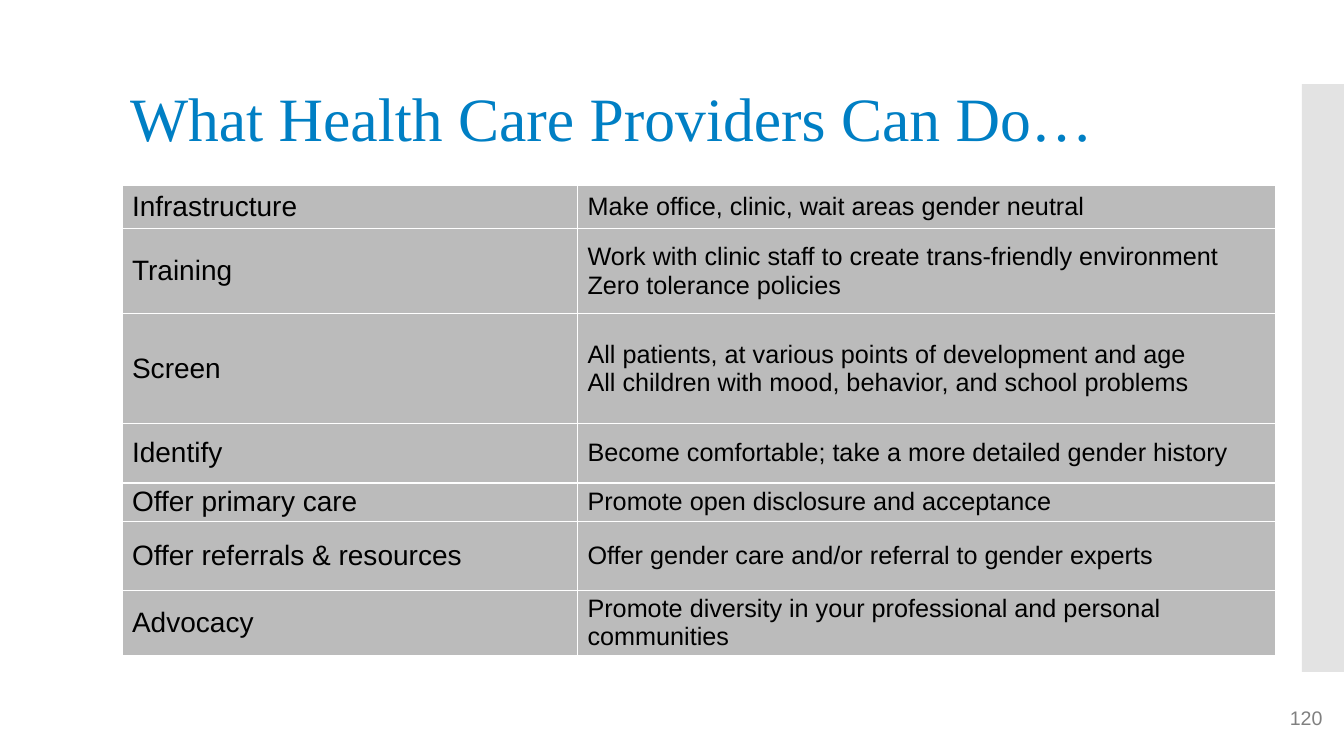
from lxml.etree import SubElement
from pptx import Presentation
from pptx.dml.color import RGBColor
from pptx.enum.shapes import MSO_SHAPE as Shape
from pptx.enum.text import MSO_ANCHOR as Anchor, PP_ALIGN as Align
from pptx.oxml.ns import qn
from pptx.util import Pt

TITLE = "What Health Care Providers Can Do…"
PAGE = "120"
# row height, topic, actions
ROWS = [
    (31, "Infrastructure", ["Make office, clinic, wait areas gender neutral"]),
    (60.5, "Training", ["Work with clinic staff to create trans-friendly environment",
                        "Zero tolerance policies"]),
    (78.5, "Screen", ["All patients, at various points of development and age",
                      "All children with mood, behavior, and school problems"]),
    (42.5, "Identify", ["Become comfortable; take a more detailed gender history"]),
    (27.4, "Offer primary care", ["Promote open disclosure and acceptance"]),
    (49.7, "Offer referrals & resources",
     ["Offer gender care and/or referral to gender experts"]),
    (46, "Advocacy",
     ["Promote diversity in your professional and personal communities"]),
]
COLS = [325.4, 499]
SIZES = [20, 18]

BLUE = RGBColor(0x00, 0x7F, 0xC4)
GRAY = RGBColor(0x80, 0x80, 0x80)
CELL = RGBColor(0xBB, 0xBB, 0xBB)
BAR = RGBColor(0xC8, 0xC8, 0xC8)
BLACK = RGBColor(0, 0, 0)
WHITE = RGBColor(0xFF, 0xFF, 0xFF)


def write(frame, lines, font, size, color, align=Align.LEFT):
    for i, line in enumerate(lines):
        para = frame.paragraphs[0] if i == 0 else frame.add_paragraph()
        para.alignment = align
        run = para.add_run()
        run.text = line
        run.font.name = font
        run.font.size = Pt(size)
        run.font.color.rgb = color


def place(shape, left, top, width, height):
    shape.left, shape.top = Pt(left), Pt(top)
    shape.width, shape.height = Pt(width), Pt(height)


def edge(cell):
    """Give the cell a thin white border on all four sides."""
    props = cell._tc.get_or_add_tcPr()
    for side in ("lnL", "lnR", "lnT", "lnB"):
        line = SubElement(props, qn(f"a:{side}"), w=str(Pt(1)))
        fill = SubElement(line, qn("a:solidFill"))
        SubElement(fill, qn("a:srgbClr"), val=str(WHITE))


def add_bar(slide):
    bar = slide.shapes.add_shape(Shape.RECTANGLE, Pt(930), Pt(60), Pt(30), Pt(420))
    bar.shadow.inherit = False
    bar.line.fill.background()
    bar.fill.solid()
    bar.fill.fore_color.rgb = BAR
    tint = bar.fill._xPr.find(qn("a:solidFill"))[0]
    SubElement(tint, qn("a:alpha"), val="50000")


def add_grid(slide):
    high = sum(row[0] for row in ROWS)
    grid = slide.shapes.add_table(len(ROWS), len(COLS), Pt(87.1), Pt(132.5),
                                  Pt(sum(COLS)), Pt(high)).table
    grid.first_row = grid.horz_banding = False
    for col, width in zip(grid.columns, COLS):
        col.width = Pt(width)
    for row, (height, topic, acts) in zip(grid.rows, ROWS):
        row.height = Pt(height)
        for cell, lines, size in zip(row.cells, ([topic], acts), SIZES):
            edge(cell)
            cell.fill.solid()
            cell.fill.fore_color.rgb = CELL
            cell.vertical_anchor = Anchor.MIDDLE
            cell.margin_left = cell.margin_right = Pt(7.2)
            cell.margin_top = cell.margin_bottom = 0
            write(cell.text_frame, lines, "Arial", size, BLACK)


def main():
    deck = Presentation()
    deck.slide_width, deck.slide_height = Pt(960), Pt(540)
    slide = deck.slides.add_slide(deck.slide_layouts[5])
    add_bar(slide)
    add_grid(slide)

    title = slide.shapes.title
    place(title, 85.7, 53.3, 757.4, 60.5)
    title.text_frame.vertical_anchor = Anchor.TOP
    write(title.text_frame, [TITLE], "Times New Roman", 44, BLUE)

    page = slide.shapes.add_textbox(Pt(678.2), Pt(500.4), Pt(273.6), Pt(28.8))
    page.text_frame.word_wrap = True
    write(page.text_frame, [PAGE], "Arial", 14, GRAY, Align.RIGHT)
    deck.save("out.pptx")


if __name__ == "__main__":
    main()
